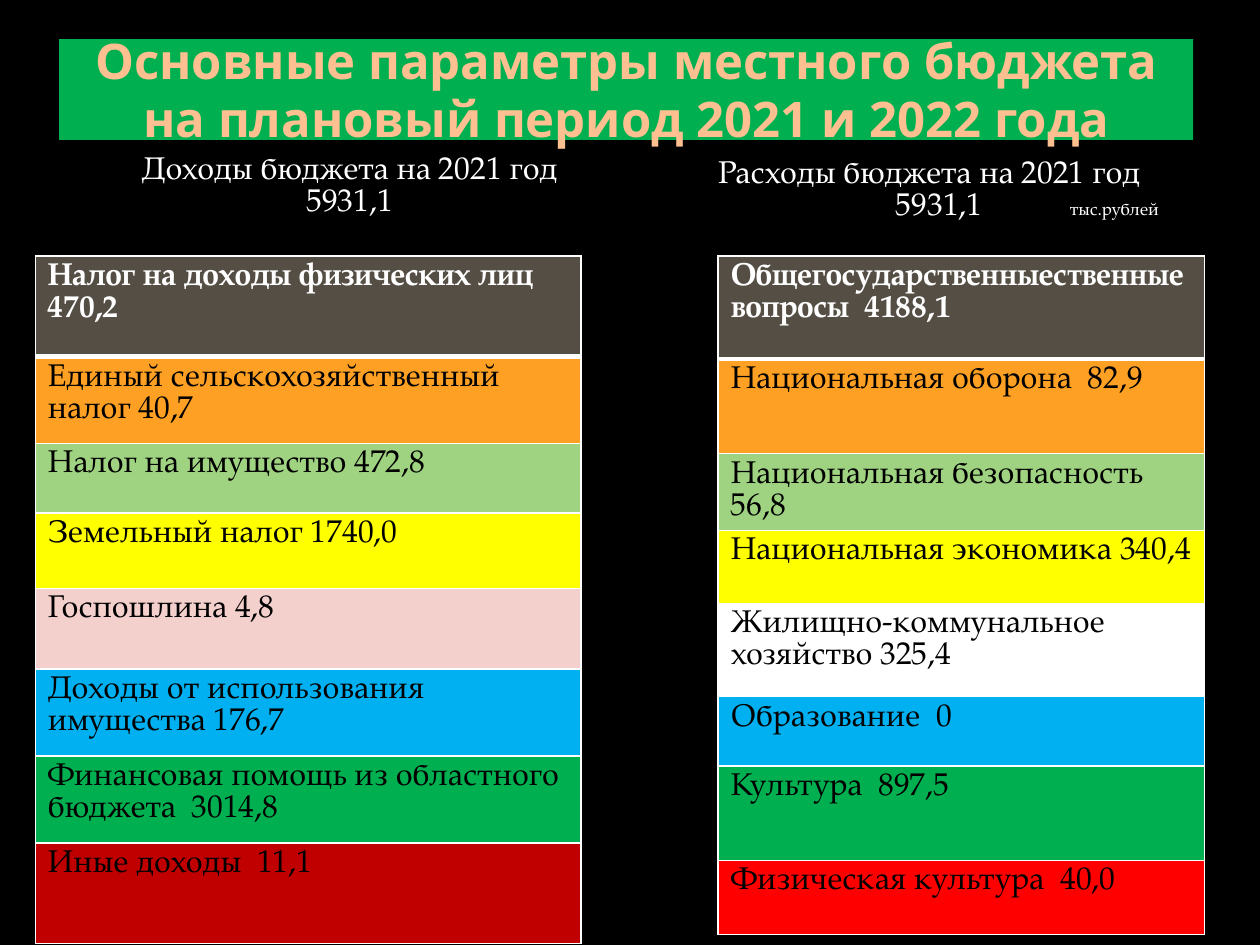
from lxml.etree import SubElement
from pptx import Presentation
from pptx.dml.color import RGBColor
from pptx.enum.text import MSO_ANCHOR, MSO_AUTO_SIZE, PP_ALIGN
from pptx.oxml.ns import qn
from pptx.util import Inches, Pt

HEADING_FONT = "Noto Sans"
BODY_FONT = "TeX Gyre Pagella"
WHITE = "FFFFFF"

INCOME = [
    ("Налог на доходы физических лиц 470,2", "554E45", 0.8),
    ("Единый сельскохозяйственный налог 40,7", "FDA023", 0.69),
    ("Налог на имущество 472,8", "A0D381", 0.55),
    ("Земельный налог 1740,0", "FFFF00", 0.6),
    ("Госпошлина 4,8", "F4D0CC", 0.64),
    ("Доходы от использования имущества 176,7", "00B0F0", 0.69),
    ("Финансовая помощь из областного бюджета  3014,8", "00B050", 0.69),
    ("Иные доходы  11,1", "C00000", 0.8),
]
EXPENSES = [
    ("Общегосударственныественные вопросы  4188,1", "554E45", 0.82),
    ("Национальная оборона  82,9", "FDA023", 0.75),
    ("Национальная безопасность\n56,8", "A0D381", 0.57),
    ("Национальная экономика 340,4", "FFFF00", 0.58),
    ("Жилищно-коммунальное хозяйство 325,4", WHITE, 0.74),
    ("Образование  0", "00B0F0", 0.55),
    ("Культура  897,5", "00B050", 0.75),
    ("Физическая культура  40,0", "FF0000", 0.59),
]


def paint(target, color):
    target.solid()
    target.fore_color.rgb = RGBColor.from_string(color)


def write(paragraph, text, font=BODY_FONT, size=18, color=WHITE, bold=False,
          align=PP_ALIGN.LEFT, spacing=18.3):
    paragraph.alignment = align
    paragraph.line_spacing = Pt(spacing)
    run = paragraph.add_run()
    run.text = text
    run.font.name = font
    run.font.size = Pt(size)
    run.font.bold = bold
    paint(run.font.fill, color)


def write_lines(frame, text, **style):
    for index, line in enumerate(text.split("\n")):
        paragraph = frame.add_paragraph() if index else frame.paragraphs[0]
        write(paragraph, line, **style)


def set_borders(cell, color=None, **widths):
    properties = cell._tc.get_or_add_tcPr()
    for position, side in enumerate(("L", "R", "T", "B")):
        width = Pt(widths.get(side, 1))
        border = properties.makeelement(qn(f"a:ln{side}"), {"w": str(width)})
        properties.insert(position, border)
        if color:
            fill = SubElement(border, qn("a:solidFill"))
            SubElement(fill, qn("a:srgbClr"), val=color)
        else:
            SubElement(border, qn("a:noFill"))


def set_tabs(paragraph, *positions):
    tabs = SubElement(paragraph._p.get_or_add_pPr(), qn("a:tabLst"))
    for position in positions:
        SubElement(tabs, qn("a:tab"), pos=str(Inches(position)), algn="l")


def add_column(slide, left, top, width, heights):
    table = slide.shapes.add_table(len(heights), 1, Inches(left), Inches(top),
                                   Inches(width), Inches(sum(heights))).table
    table.first_row = table.horz_banding = False
    for row, height in zip(table.rows, heights):
        row.height = Inches(height)
    return table


def add_title(slide, text):
    title = slide.shapes.title
    title.left, title.top = Inches(0.47), Inches(0.31)
    title.width, title.height = Inches(9), Inches(0.8)
    paint(title.fill, "00B050")
    frame = title.text_frame
    frame.auto_size = MSO_AUTO_SIZE.NONE
    frame.word_wrap = True
    frame.vertical_anchor = MSO_ANCHOR.MIDDLE
    write(frame.paragraphs[0], text, font=HEADING_FONT, size=28, color="FFC091",
          bold=True, align=PP_ALIGN.CENTER, spacing=33)


def add_heading(slide, text, left, top, width, height):
    cell = add_column(slide, left, top, width, [height]).cell(0, 0)
    cell.fill.background()
    set_borders(cell)
    write_lines(cell.text_frame, text, align=PP_ALIGN.CENTER)
    return cell.text_frame


def add_budget(slide, items, left, top, width):
    table = add_column(slide, left, top, width, [height for _, _, height in items])
    for index, (text, color, _) in enumerate(items):
        cell = table.cell(index, 0)
        first = index == 0
        paint(cell.fill, color)
        set_borders(cell, WHITE, T=3 if index == 1 else 1, B=3 if first else 1)
        write_lines(cell.text_frame, text, bold=first,
                    color=WHITE if first else "000000")


def main():
    presentation = Presentation()
    presentation.slide_width, presentation.slide_height = Inches(10), Inches(7.5)
    slide = presentation.slides.add_slide(presentation.slide_layouts[5])
    paint(slide.background.fill, "000000")

    add_title(slide, "Основные параметры местного бюджета на плановый период 2021 и 2022 года")
    add_heading(slide, "Доходы бюджета на 2021 год\n5931,1", 0.52, 1.19, 4.51, 0.77)
    expenses_heading = add_heading(slide, "Расходы бюджета на 2021 год", 5.14, 1.22, 4.47, 0.76)
    total = expenses_heading.add_paragraph()
    write(total, "\t5931,1")
    write(total, "\tтыс.рублей", size=10)
    set_tabs(total, 1.87, 3.25)

    add_budget(slide, INCOME, 0.28, 2.03, 4.33)
    add_budget(slide, EXPENSES, 5.7, 2.03, 3.86)
    presentation.save("out.pptx")


if __name__ == "__main__":
    main()
